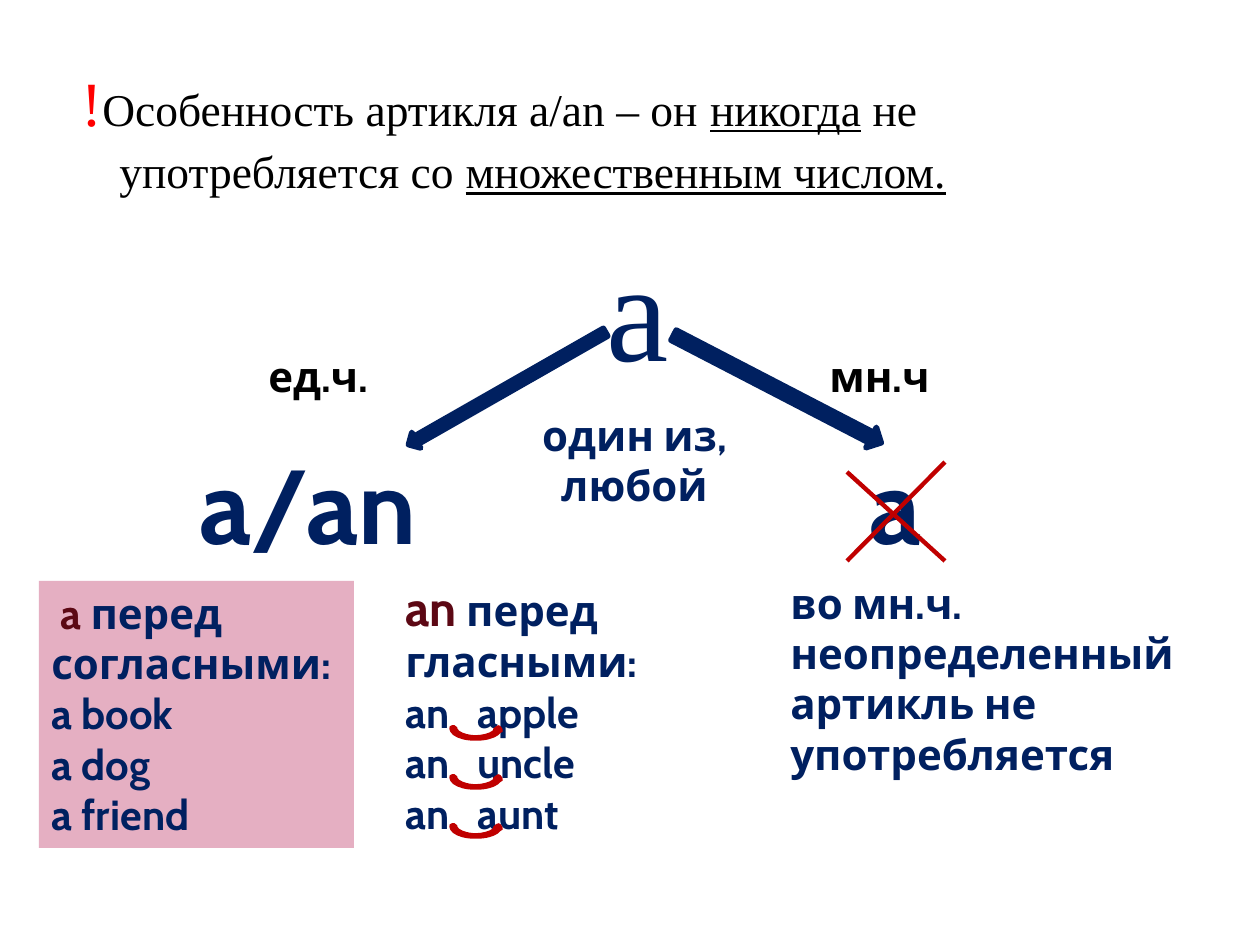
from pptx import Presentation
from pptx.util import Pt
from pptx.dml.color import RGBColor
from pptx.enum.shapes import MSO_SHAPE, MSO_CONNECTOR
from pptx.enum.text import PP_ALIGN, MSO_ANCHOR
from lxml import etree

RECT, DOWN, CURVE = MSO_SHAPE.RECTANGLE, MSO_SHAPE.DOWN_ARROW, MSO_SHAPE.CURVED_UP_ARROW
LEFT, MID, TOP = PP_ALIGN.LEFT, PP_ALIGN.CENTER, MSO_ANCHOR.TOP
LINE = MSO_CONNECTOR.STRAIGHT
NS = "{http://schemas.openxmlformats.org/drawingml/2006/main}"
PX = 914400 // 126

THEME = {
    "navy": RGBColor.from_string("002060"),
    "black": RGBColor.from_string("000000"),
    "red": RGBColor.from_string("FF0000"),
    "cross": RGBColor.from_string("C00000"),
    "wine": RGBColor.from_string("5C0814"),
    "rose": RGBColor.from_string("B83D68"),
    "pink": RGBColor.from_string("E5AFC2"),
    "serif": "Times New Roman", "sans": "Cabin",
    "text": 24, "rule": 26, "lead": 28, "mark": 36, "big": 60, "huge": 80,
}


def write(frame, paras, font="sans", bold=True, align=LEFT):
    frame.word_wrap = True
    frame.vertical_anchor = TOP
    for i, runs in enumerate(paras):
        para = frame.paragraphs[0] if i == 0 else frame.add_paragraph()
        para.alignment = align
        for text, size, color, *under in runs:
            run = para.add_run()
            run.text = text
            run.font.name = THEME[font]
            run.font.size = Pt(THEME[size])
            run.font.bold = bold
            run.font.underline = bool(under)
            run.font.color.rgb = THEME[color]
    return frame.paragraphs


def draw(kind, x, y, w, h, fill, edge=None, turn=0):
    shape = slide.shapes.add_shape(kind, x * PX, y * PX, w * PX, h * PX)
    shape.shadow.inherit = False
    shape.rotation = turn
    shape.fill.solid()
    shape.fill.fore_color.rgb = THEME[fill]
    if edge:
        shape.line.color.rgb = THEME[edge]
        shape.line.width = Pt(3.15)
    else:
        shape.line.fill.background()
    return shape


deck = Presentation()
deck.slide_width, deck.slide_height = 1260 * PX, 945 * PX
slide = deck.slides.add_slide(deck.slide_layouts[6])

rule = slide.shapes.add_textbox(69 * PX, 51 * PX, 998 * PX, 668 * PX)
head, root = write(rule.text_frame, [
    [("!", "mark", "red"),
     ("Особенность артикля a/an – он ", "rule", "black"),
     ("никогда", "rule", "black", True),
     (" не употребляется со ", "rule", "black"),
     ("множественным числом.", "rule", "black", True)],
    [("а", "huge", "navy")],
], "serif", False)
root.alignment = MID
root.space_before = Pt(6)
for para, left, first in [(head, 38, -38), (root, 140, 0)]:
    para.line_spacing = 1.08
    props = para._p.get_or_add_pPr()
    props.set("marL", str(left * PX))
    props.set("indent", str(first * PX))

for text, x, y, w, h, size, color, align in [
    ("ед.ч.", 256, 344, 137, 64, "text", "black", LEFT),
    ("мн.ч", 817, 344, 129, 64, "text", "black", LEFT),
    ("a/an", 187, 433, 295, 140, "big", "navy", LEFT),
    ("a", 857, 433, 108, 140, "big", "navy", LEFT),
    ("во мн.ч. неопределенный артикль не употребляется",
     778, 571, 443, 217, "text", "navy", LEFT),
    ("один из, любой", 512, 403, 245, 115, "text", "navy", MID),
]:
    box = slide.shapes.add_textbox(x * PX, y * PX, w * PX, h * PX)
    write(box.text_frame, [[(text, size, color)]], align=align)

for x1, y1, x2, y2 in [(847, 472, 945, 561), (945, 462, 847, 561)]:
    bar = slide.shapes.add_connector(LINE, x1 * PX, y1 * PX, x2 * PX, y2 * PX)
    bar.line.color.rgb = THEME["cross"]
    bar.line.width = Pt(2.5)
    etree.SubElement(bar._element.spPr, NS + "effectLst")

vowel = slide.shapes.add_textbox(393 * PX, 571 * PX, 286 * PX, 276 * PX)
lines = write(vowel.text_frame, [
    [("an", "lead", "wine"), (" ", "text", "black"), ("перед гласными:", "text", "navy")],
    *[[("an\t" + word, "text", "navy")] for word in ("apple", "uncle", "aunt")],
])
for para in lines[1:]:
    tabs = etree.SubElement(para._p.get_or_add_pPr(), NS + "tabLst")
    etree.SubElement(tabs, NS + "tab", pos=str(72 * PX), algn="l")

for row in range(3):
    draw(CURVE, 452, 728 + 49 * row, 49, 10, "rose", "cross")

draw(DOWN, 766, 272, 23, 234, "navy", "navy", 297.4)
draw(DOWN, 498, 275, 18, 227, "navy", "navy", 60.3)

card = draw(RECT, 39, 581, 315, 267, "pink")
lines = write(card.text_frame, [
    [("a ", "text", "wine"), ("перед согласными:", "text", "navy")],
    *[[("a " + word, "text", "navy")] for word in ("book", "dog", "friend")],
])
lines[0]._p.get_or_add_pPr().set("indent", str(9 * PX))

deck.save("out.pptx")
